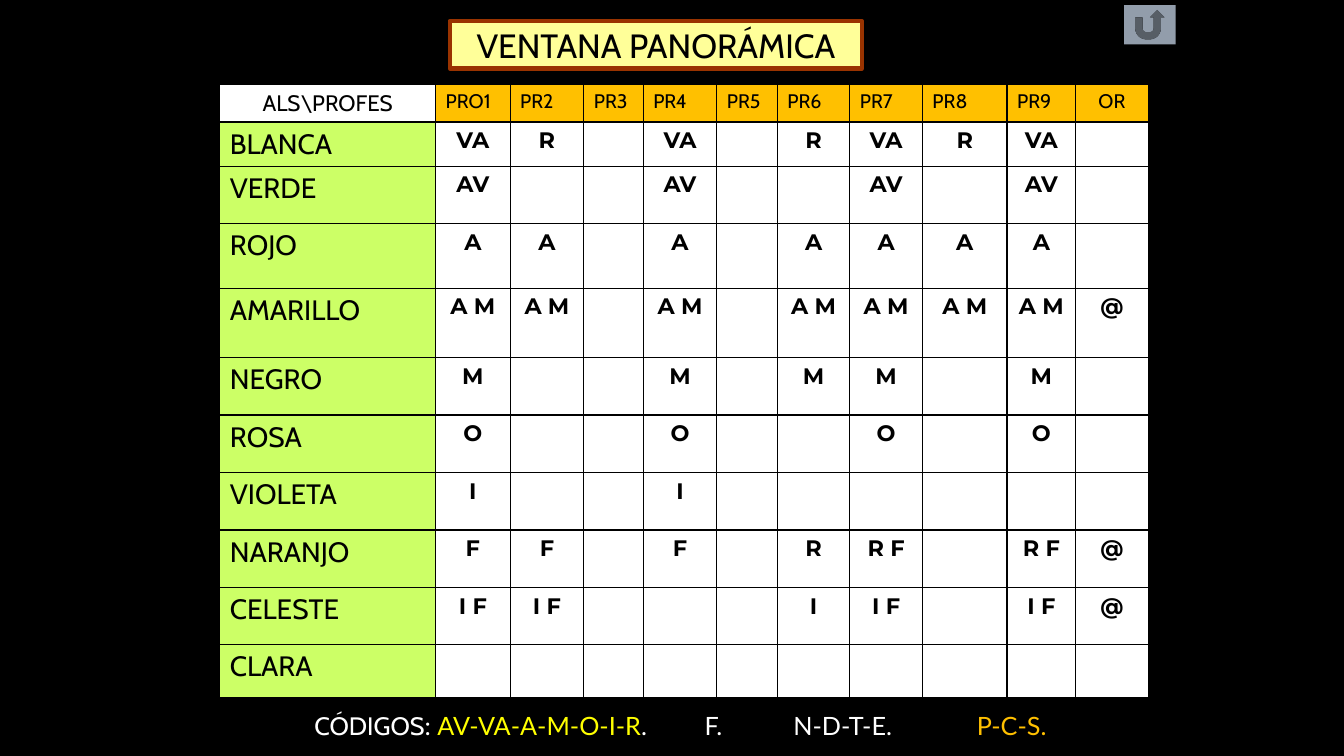
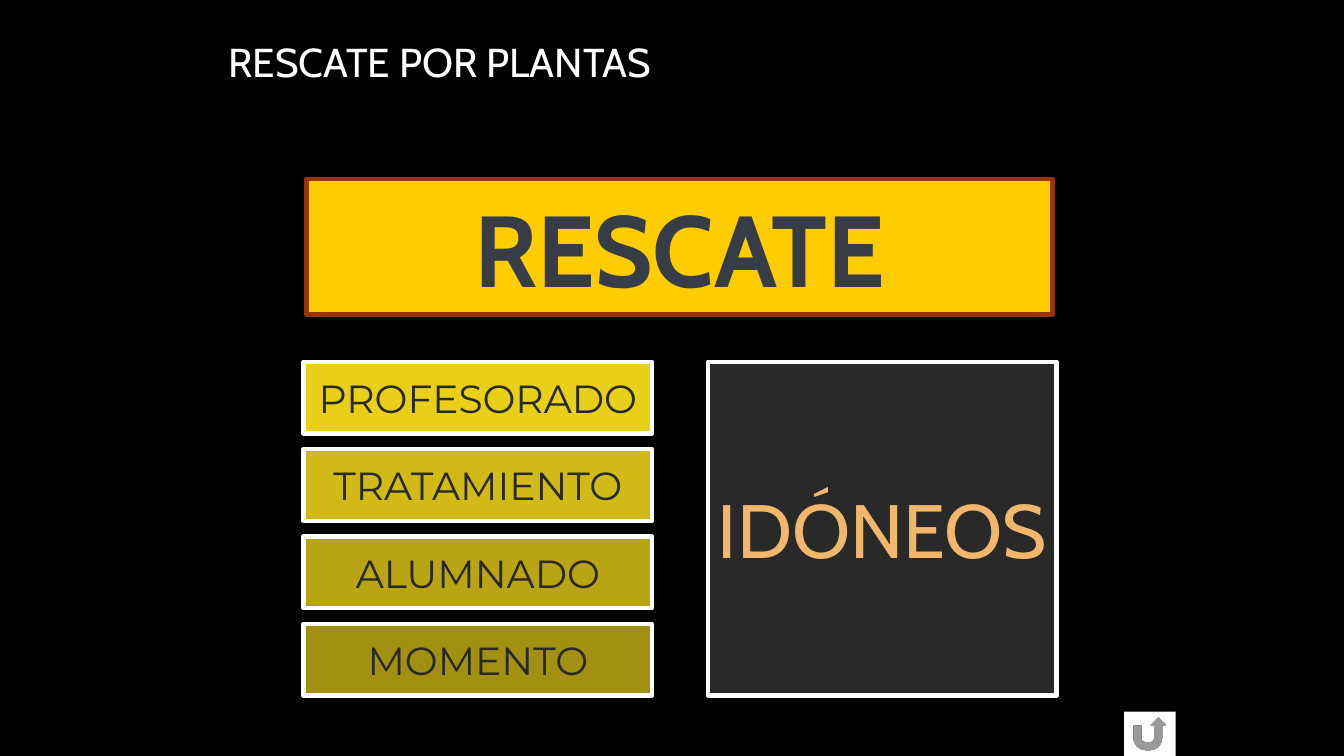
from lxml import etree
from pptx import Presentation
from pptx import util as u
from pptx.dml.color import RGBColor
from pptx.enum import shapes, text
from pptx.oxml.ns import qn

HUES = {
    "black": "000000", "white": "FFFFFF", "amber": "FFC000", "lime": "CCFF66",
    "yellow": "FFFF00", "cream": "FFFF99", "rust": "993300", "gold": "FFCC00",
    "slate": "363D46", "coal": "292929", "peach": "F1B76C", "corn": "E8CF18",
    "steel": "929DAB",
}
CABIN, MONT, LATO = "Cabin", "Montserrat", "Lato"
LEFT, MID = text.PP_ALIGN.LEFT, text.PP_ALIGN.CENTER

COLS = [2.14, 0.74, 0.73, 0.59, 0.73, 0.6, 0.72, 0.72, 0.84, 0.68, 0.72]
ROWS = [0.37, 0.43, 0.57, 0.64, 0.69, 0.57, 0.57, 0.57, 0.57, 0.57, 0.52]
GRID = [
    "ALS\\PROFES|PRO1|PR2|PR3|PR4|PR5|PR6|PR7|PR8|PR9|OR",
    "BLANCA|VA|R||VA||R|VA|R|VA|",
    "VERDE|AV|||AV|||AV||AV|",
    "ROJO|A|A||A||A|A|A|A|",
    "AMARILLO|A M|A M||A M||A M|A M|A M|A M|@",
    "NEGRO|M|||M||M|M||M|",
    "ROSA|O|||O|||O||O|",
    "VIOLETA|I|||I||||||",
    "NARANJO|F|F||F||R|R F||R F|@",
    "CELESTE|I F|I F||||I|I F||I F|@",
    "CLARA||||||||||",
]
CODES = [
    ("CÓDIGOS", CABIN, "white"), (": ", LATO, "white"),
    ("AV-VA-A-M-O-I-R", LATO, "yellow"),
    (".\tF.\tN-D-T-E.\t", LATO, "white"), ("P-C-S.", LATO, "amber"),
]
STOPS = [3.87, 4.75, 6.57]
STEPS = ["PROFESORADO", "TRATAMIENTO", "ALUMNADO", "MOMENTO"]


def rgb(hue):
    return RGBColor.from_string(HUES[hue])


def box(at):
    return [u.Inches(n) for n in at]


def paint(item, hue):
    item.fill.solid()
    item.fill.fore_color.rgb = rgb(hue)


def write(para, words, hue="black", **form):
    """Add a run; form holds font attributes."""
    run = para.add_run()
    run.text = words
    for key, val in form.items():
        setattr(run.font, key, u.Pt(val) if key == "size" else val)
    run.font.color.rgb = rgb(hue)


def fade(shape, share):
    """Set the opacity of a solid fill, in percent."""
    tint = shape.fill._xPr.find(qn("a:solidFill"))[0]
    etree.SubElement(tint, qn("a:alpha"), val=str(share * 1000))


def panel(slide, at, fill, edge=None, words="", kind=shapes.MSO_SHAPE.RECTANGLE, **form):
    shape = slide.shapes.add_shape(kind, *box(at))
    shape.shadow.inherit = False
    paint(shape, fill)
    if edge:
        shape.line.color.rgb = rgb(edge)
        shape.line.width = u.Pt(3)
    else:
        shape.line.fill.background()
    if words:
        frame = shape.text_frame
        frame.word_wrap = False
        frame.vertical_anchor = text.MSO_ANCHOR.MIDDLE
        frame.paragraphs[0].alignment = MID
        write(frame.paragraphs[0], words, **form)
    return shape


def label(slide, at):
    """Add an empty text box and give its paragraph."""
    frame = slide.shapes.add_textbox(*box(at)).text_frame
    frame.word_wrap = True
    frame.vertical_anchor = text.MSO_ANCHOR.MIDDLE
    return frame.paragraphs[0]


def back(slide, top, high, fill):
    """Add the return button."""
    panel(slide, (11.15, top, 0.51, high), fill,
          kind=shapes.MSO_SHAPE.ACTION_BUTTON_RETURN)


def rule(cell):
    """Draw thin black borders round a cell."""
    props = cell._tc.get_or_add_tcPr()
    for side in "LRTB":
        line = etree.SubElement(props, qn("a:ln" + side), w=str(u.Pt(1)))
        fill = etree.SubElement(line, qn("a:solidFill"))
        etree.SubElement(fill, qn("a:srgbClr"), val=HUES["black"])


def style(row, col):
    """Give the fill, alignment and font of a table cell."""
    if row == 0 and col == 0:
        return "white", MID, {"name": CABIN, "size": 16}
    if row == 0:
        return "amber", MID if col == len(COLS) - 1 else LEFT, {"name": CABIN, "size": 14}
    if col == 0:
        return "lime", LEFT, {"name": CABIN, "size": 20}
    return "white", MID, {"name": MONT, "size": 16, "bold": True}


def chart(slide):
    """Add the table of pupils and teachers."""
    at = 2.18, 0.84, sum(COLS), sum(ROWS)
    table = slide.shapes.add_table(len(ROWS), len(COLS), *box(at)).table
    table.first_row = table.horz_banding = False
    for col, wide in zip(table.columns, COLS):
        col.width = u.Inches(wide)
    for i, (high, line) in enumerate(zip(ROWS, GRID)):
        table.rows[i].height = u.Inches(high)
        for j, words in enumerate(line.split("|")):
            cell = table.cell(i, j)
            fill, align, form = style(i, j)
            rule(cell)
            paint(cell, fill)
            if words:
                para = cell.text_frame.paragraphs[0]
                para.alignment = align
                write(para, words, **form)


def codes(slide):
    para = label(slide, (3.02, 7, 7.8, 0.4))
    tabs = etree.SubElement(para._p.get_or_add_pPr(), qn("a:tabLst"))
    for stop in STOPS:
        etree.SubElement(tabs, qn("a:tab"), pos=str(u.Inches(stop)), algn="l")
    for words, name, hue in CODES:
        write(para, words, hue, name=name, size=18)


def window(slide):
    chart(slide)
    codes(slide)
    panel(slide, (4.46, 0.21, 4.09, 0.47), "cream", "rust", "VENTANA PANORÁMICA",
          name=CABIN, size=24)
    back(slide, 0.05, 0.39, "steel")


def rescue(slide):
    write(label(slide, (2.17, 0.3, 9, 0.61)), "RESCATE POR PLANTAS", "white",
          name=CABIN, size=28.8)
    top, high, full = 3.59, 0.71, 3.31
    pitch = (full - high) / (len(STEPS) - 1)
    for i, words in enumerate(STEPS):
        bar = panel(slide, (3.01, top + i * pitch, 3.46, high), "corn", "white", words,
                    hue="coal", name=MONT, size=28)
        if i:
            fade(bar, 100 - 10 * i)
    panel(slide, (7.02, top, 3.46, full), "coal", "white", "IDÓNEOS",
          hue="peach", name=CABIN, size=54)
    panel(slide, (3.04, 1.78, 7.4, 1.34), "gold", "rust", "RESCATE",
          hue="slate", name=CABIN, size=72, bold=True)
    back(slide, 7.06, 0.44, "white")


def main():
    deck = Presentation()
    deck.slide_width, deck.slide_height = box((13.33, 7.5))
    for build in (window, rescue):
        slide = deck.slides.add_slide(deck.slide_layouts[6])
        paint(slide.background, "black")
        build(slide)
    deck.save("out.pptx")


if __name__ == "__main__":
    main()
